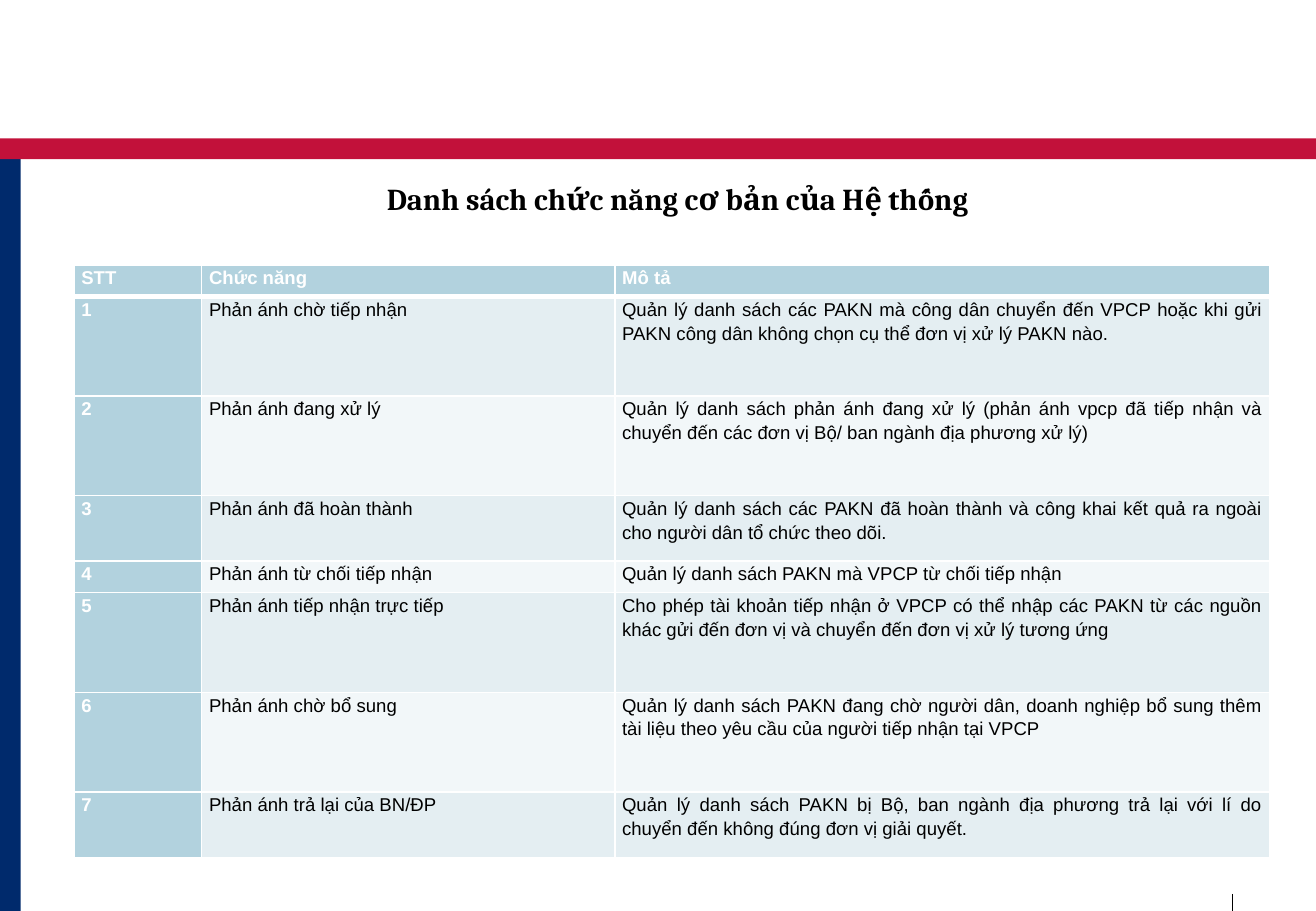
from dataclasses import dataclass

import pptx
import pptx.dml.color
import pptx.enum.shapes
import pptx.enum.text
import pptx.oxml
import pptx.oxml.ns
import pptx.slide
import pptx.table
import pptx.util

RGBColor = pptx.dml.color.RGBColor
BLACK = RGBColor(0x00, 0x00, 0x00)
WHITE = RGBColor(0xFF, 0xFF, 0xFF)
NAVY = RGBColor(0x00, 0x2A, 0x6C)
CRIMSON = RGBColor(0xC2, 0x11, 0x3A)
HEADER_BLUE = RGBColor(0xB2, 0xD2, 0xDE)
BAND_COLORS = (RGBColor(0xE4, 0xEE, 0xF2), RGBColor(0xF2, 0xF7, 0xF9))

SLIDE_WIDTH = pptx.util.Inches(10.83)
SLIDE_HEIGHT = pptx.util.Inches(7.5)

# Table measures, in percent of the slide
COLUMN_WIDTHS = (9.7, 31.39, 49.77)
ROW_HEIGHT = 3.47
EXTRA_LINE_HEIGHT = 3.73


@dataclass
class Bar:
    left: float
    top: float
    width: float
    height: float
    color: RGBColor


@dataclass
class TableRow:
    number: str
    function: str
    description: str
    extra_lines: int = 0


BARS = (
    Bar(0, 17.47, 1.57, 82.53, NAVY),
    Bar(0, 15.2, 100, 2.27, CRIMSON),
)

ROWS = (
    TableRow("STT", "Chức năng", "Mô tả"),
    TableRow("1", "Phản ánh chờ tiếp nhận",
             "Quản lý danh sách các PAKN mà công dân chuyển đến VPCP hoặc khi gửi "
             "PAKN công dân không chọn cụ thể đơn vị xử lý PAKN nào.", 2),
    TableRow("2", "Phản ánh đang xử lý",
             "Quản lý danh sách phản ánh đang xử lý (phản ánh vpcp đã tiếp nhận và "
             "chuyển đến các đơn vị Bộ/ ban ngành địa phương xử lý)", 2),
    TableRow("3", "Phản ánh đã hoàn thành",
             "Quản lý danh sách các PAKN đã hoàn thành và công khai kết quả ra ngoài "
             "cho người dân tổ chức theo dõi.", 1),
    TableRow("4", "Phản ánh từ chối tiếp nhận",
             "Quản lý danh sách PAKN mà VPCP từ chối tiếp nhận"),
    TableRow("5", "Phản ánh tiếp nhận trực tiếp",
             "Cho phép tài khoản tiếp nhận ở VPCP có thể nhập các PAKN từ các nguồn "
             "khác gửi đến đơn vị và chuyển đến đơn vị xử lý tương ứng", 2),
    TableRow("6", "Phản ánh chờ bổ sung",
             "Quản lý danh sách PAKN đang chờ người dân, doanh nghiệp bổ sung thêm "
             "tài liệu theo yêu cầu của người tiếp nhận tại VPCP", 2),
    TableRow("7", "Phản ánh trả lại của BN/ĐP",
             "Quản lý danh sách PAKN bị Bộ, ban ngành địa phương trả lại với lí do "
             "chuyển đến không đúng đơn vị giải quyết.", 1),
)


def across(percent: float) -> int:
    return round(SLIDE_WIDTH * percent / 100)


def down(percent: float) -> int:
    return round(SLIDE_HEIGHT * percent / 100)


def draw_bar(slide: pptx.slide.Slide, bar: Bar) -> None:
    shape = slide.shapes.add_shape(
        pptx.enum.shapes.MSO_SHAPE.RECTANGLE,
        across(bar.left), down(bar.top), across(bar.width), down(bar.height))
    shape.shadow.inherit = False
    shape.fill.solid()
    shape.fill.fore_color.rgb = bar.color
    shape.line.fill.background()


def draw_footer_line(slide: pptx.slide.Slide) -> None:
    connector = slide.shapes.add_connector(
        pptx.enum.shapes.MSO_CONNECTOR.STRAIGHT,
        across(93.63), down(98.13), across(93.63), down(100))
    connector.line.color.rgb = BLACK
    connector.line.width = pptx.util.Pt(0.75)
    properties = connector.element.find(pptx.oxml.ns.qn("p:spPr"))
    properties.append(pptx.oxml.parse_xml(
        f'<a:effectLst {pptx.oxml.ns.nsdecls("a")}/>'))


def format_title(slide: pptx.slide.Slide) -> None:
    title = slide.shapes.title
    title.left, title.top = across(15.14), down(19.07)
    title.width, title.height = across(72.67), down(5.33)
    frame = title.text_frame
    frame.text = "Danh sách chức năng cơ bản của Hệ thống"
    frame.word_wrap = True
    frame.auto_size = pptx.enum.text.MSO_AUTO_SIZE.NONE
    frame.vertical_anchor = pptx.enum.text.MSO_ANCHOR.MIDDLE
    paragraph = frame.paragraphs[0]
    paragraph.alignment = pptx.enum.text.PP_ALIGN.CENTER
    paragraph.font.name = "Cambria"
    paragraph.font.size = pptx.util.Pt(18)
    paragraph.font.bold = True
    paragraph.font.color.rgb = BLACK


def set_borders(cell: pptx.table._Cell, row_index: int) -> None:
    """Thin white borders, with a thick one under the header row."""
    points = {"L": 1, "R": 1, "T": 3 if row_index == 1 else 1,
              "B": 3 if row_index == 0 else 1}
    properties = cell._tc.get_or_add_tcPr()
    for side, width in points.items():
        properties.append(pptx.oxml.parse_xml(
            f'<a:ln{side} {pptx.oxml.ns.nsdecls("a")} w="{pptx.util.Pt(width)}">'
            f'<a:solidFill><a:srgbClr val="{WHITE}"/></a:solidFill></a:ln{side}>'))


def fill_cell(cell: pptx.table._Cell, text: str, row_index: int,
              column_index: int) -> None:
    is_heading = row_index == 0 or column_index == 0
    set_borders(cell, row_index)
    cell.fill.solid()
    cell.fill.fore_color.rgb = (
        HEADER_BLUE if is_heading else BAND_COLORS[(row_index - 1) % 2])
    cell.margin_left = cell.margin_right = pptx.util.Inches(0.06)
    cell.margin_top = cell.margin_bottom = 0
    cell.text = text
    paragraph = cell.text_frame.paragraphs[0]
    paragraph.alignment = pptx.enum.text.PP_ALIGN.JUSTIFY
    paragraph.line_spacing = 1.15
    paragraph.space_after = pptx.util.Pt(8)
    paragraph.font.name = "Arial"
    paragraph.font.size = pptx.util.Pt(11)
    paragraph.font.bold = is_heading
    paragraph.font.color.rgb = WHITE if is_heading else BLACK


def draw_table(slide: pptx.slide.Slide) -> None:
    heights = [ROW_HEIGHT + EXTRA_LINE_HEIGHT * row.extra_lines for row in ROWS]
    table = slide.shapes.add_table(
        len(ROWS), len(COLUMN_WIDTHS), across(5.63), down(29.07),
        across(sum(COLUMN_WIDTHS)), down(sum(heights))).table
    table.horz_banding = False
    for column, width in zip(table.columns, COLUMN_WIDTHS):
        column.width = across(width)
    for row_index, (row, height) in enumerate(zip(ROWS, heights)):
        table.rows[row_index].height = down(height)
        texts = (row.number, row.function, row.description)
        for column_index, text in enumerate(texts):
            fill_cell(table.cell(row_index, column_index), text,
                      row_index, column_index)


def main() -> None:
    presentation = pptx.Presentation()
    presentation.slide_width = SLIDE_WIDTH
    presentation.slide_height = SLIDE_HEIGHT
    slide = presentation.slides.add_slide(presentation.slide_layouts[5])

    # Frame of the page
    draw_footer_line(slide)
    for bar in BARS:
        draw_bar(slide, bar)

    # Title and list of functions
    format_title(slide)
    draw_table(slide)
    presentation.save("out.pptx")


if __name__ == "__main__":
    main()
